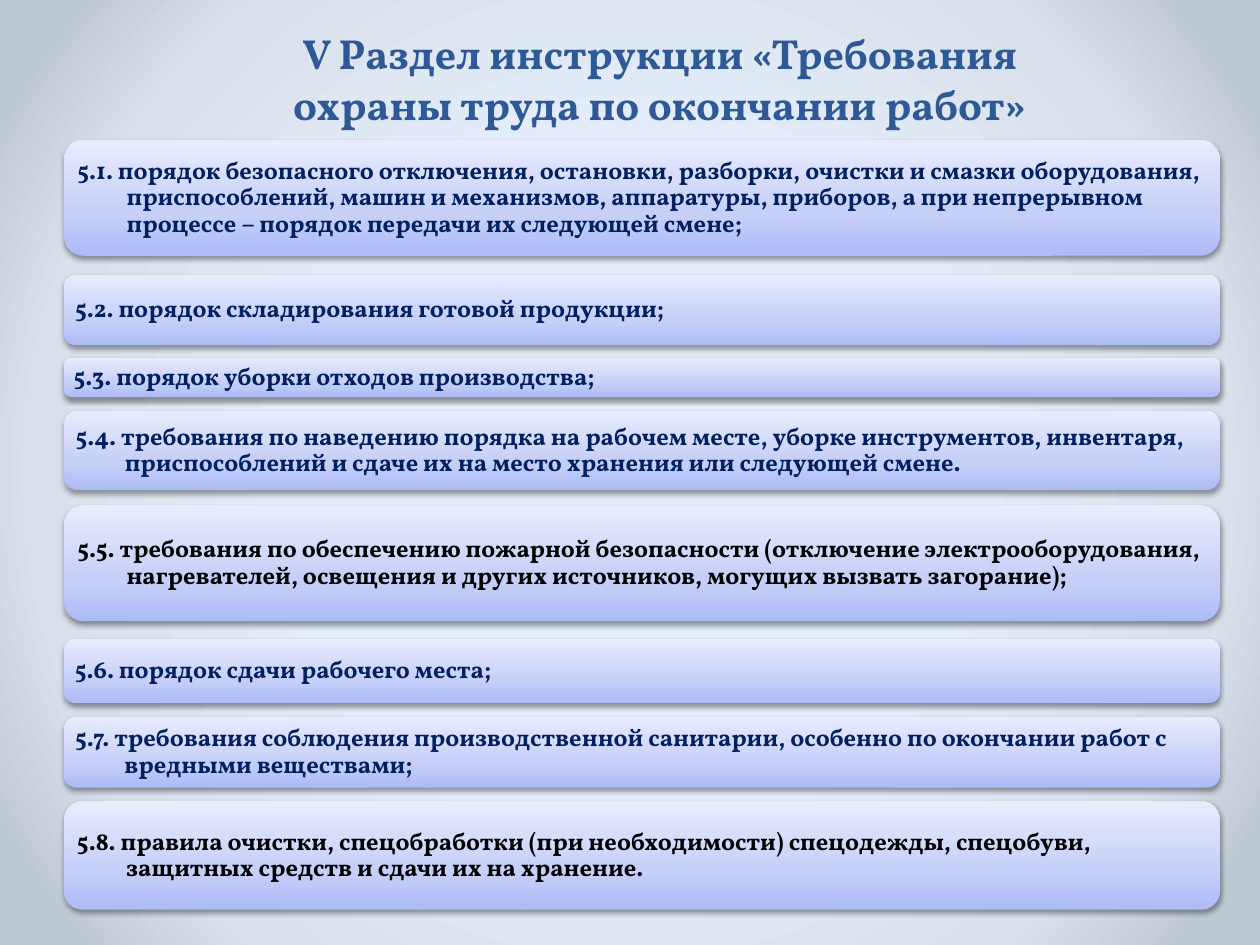
from dataclasses import dataclass

import lxml.etree
import pptx
import pptx.dml.color
import pptx.enum.shapes
import pptx.enum.text
import pptx.oxml
import pptx.oxml.ns
import pptx.util


@dataclass(frozen=True)
class Theme:
    font: str = "Vollkorn"
    title_size: int = 24
    item_size: int = 14
    title_color: str = "2F5897"
    item_color: str = "002060"
    accent_color: str = "000000"
    shadow_color: str = "000000"
    backdrop: tuple = ((43, "E3EDF9"), (76, "D8E0EB"), (92, "BFC9D4"))
    card: tuple = ((0, "ADBBF6"), (35, "C5CFF8"), (100, "E8ECFD"))


THEME = Theme()
WIDTH, HEIGHT = pptx.util.Inches(10), pptx.util.Inches(7.5)
RADIAL = ('<a:path {ns} path="circle"><a:fillToRect l="50000" t="50000" '
          'r="50000" b="50000"/></a:path>')
UPWARD = '<a:lin {ns} ang="16200000" scaled="0"/>'

TITLE = "V Раздел инструкции «Требования охраны труда по окончании работ»"
TITLE_BOX = (16.5, 2.27, 71.7, 12.13)
CARD_LEFT, CARD_WIDTH = 5.1, 91.7

# Top and height in percent of the slide height, colour, text
CARDS = [
    (14.8, 12.27, THEME.item_color,
     "5.1. порядок безопасного отключения, остановки, разборки, очистки и смазки "
     "оборудования, приспособлений, машин и механизмов, аппаратуры, приборов, а при "
     "непрерывном процессе – порядок передачи их следующей смене;"),
    (29.07, 7.47, THEME.item_color, "5.2. порядок складирования готовой продукции;"),
    (37.87, 4.13, THEME.item_color, "5.3. порядок уборки отходов производства;"),
    (43.47, 8.4, THEME.item_color,
     "5.4. требования по наведению порядка на рабочем месте, уборке инструментов, "
     "инвентаря, приспособлений и сдаче их на место хранения или следующей смене."),
    (53.47, 12.27, THEME.accent_color,
     "5.5. требования по обеспечению пожарной безопасности (отключение "
     "электрооборудования, нагревателей, освещения и других источников, могущих "
     "вызвать загорание);"),
    (67.6, 6.8, THEME.item_color, "5.6. порядок сдачи рабочего места;"),
    (75.87, 7.47, THEME.item_color,
     "5.7. требования соблюдения производственной санитарии, особенно по окончании "
     "работ с вредными веществами;"),
    (84.8, 11.47, THEME.accent_color,
     "5.8. правила очистки, спецобработки (при необходимости) спецодежды, спецобуви, "
     "защитных средств и сдачи их на хранение."),
]


def to_emu(box):
    """Turn percentages of the slide into left, top, width, height."""
    return [round(share * side / 100)
            for share, side in zip(box, (WIDTH, HEIGHT, WIDTH, HEIGHT))]


def set_gradient(fill, owner, stops, direction):
    """Give a fill any number of stops and a linear or radial direction."""
    fill.gradient()
    grad = owner.find(".//" + pptx.oxml.ns.qn("a:gradFill"))
    for child in list(grad):
        grad.remove(child)
    stop_list = lxml.etree.SubElement(grad, pptx.oxml.ns.qn("a:gsLst"))
    for position, color in stops:
        stop = lxml.etree.SubElement(stop_list, pptx.oxml.ns.qn("a:gs"),
                                     pos=str(position * 1000))
        lxml.etree.SubElement(stop, pptx.oxml.ns.qn("a:srgbClr"), val=color)
    grad.append(pptx.oxml.parse_xml(
        direction.format(ns=pptx.oxml.ns.nsdecls("a"))))


def add_shadow(shape):
    shape.shadow.inherit = False
    effects = shape._element.spPr.find(pptx.oxml.ns.qn("a:effectLst"))
    shadow = lxml.etree.SubElement(
        effects, pptx.oxml.ns.qn("a:outerShdw"), dir="5400000", rotWithShape="0",
        blurRad=str(pptx.util.Pt(3.1)), dist=str(pptx.util.Pt(1.6)))
    color = lxml.etree.SubElement(shadow, pptx.oxml.ns.qn("a:srgbClr"),
                                  val=THEME.shadow_color)
    lxml.etree.SubElement(color, pptx.oxml.ns.qn("a:alpha"), val="38000")


def add_run(p, text, size, color):
    r = p.add_run()
    r.text = text
    r.font.name = THEME.font
    r.font.size = pptx.util.Pt(size)
    r.font.bold = True
    r.font.color.rgb = pptx.dml.color.RGBColor.from_string(color)


def fill_title(s, box, text):
    title = s.shapes.title
    title.left, title.top, title.width, title.height = to_emu(box)
    tf = title.text_frame
    tf.word_wrap = True
    tf.auto_size = pptx.enum.text.MSO_AUTO_SIZE.NONE
    tf.vertical_anchor = pptx.enum.text.MSO_ANCHOR.TOP
    tf.margin_left = tf.margin_right = pptx.util.Inches(0.3)
    p = tf.paragraphs[0]
    p.alignment = pptx.enum.text.PP_ALIGN.CENTER
    add_run(p, text, THEME.title_size, THEME.title_color)


def add_card(s, box, color, text):
    """Add a rounded card whose text hangs behind its number."""
    sp = s.shapes.add_shape(pptx.enum.shapes.MSO_SHAPE.ROUNDED_RECTANGLE,
                            *to_emu(box))
    set_gradient(sp.fill, sp._element, THEME.card, UPWARD)
    sp.line.fill.background()
    add_shadow(sp)
    tf = sp.text_frame
    tf.word_wrap = True
    tf.vertical_anchor = pptx.enum.text.MSO_ANCHOR.MIDDLE
    tf.margin_left = tf.margin_right = pptx.util.Inches(0.06)
    tf.margin_top = tf.margin_bottom = pptx.util.Inches(0.06)
    p = tf.paragraphs[0]
    p.alignment = pptx.enum.text.PP_ALIGN.LEFT
    p.line_spacing = 0.9
    indent = pptx.util.Inches(0.39)
    p_pr = p._p.get_or_add_pPr()
    p_pr.set("marL", str(indent))
    p_pr.set("indent", str(-indent))
    add_run(p, text, THEME.item_size, color)


def build_requirements_slide(prs):
    s = prs.slides.add_slide(prs.slide_layouts.get_by_name("Title Only"))
    set_gradient(s.background.fill, s._element, THEME.backdrop, RADIAL)
    fill_title(s, TITLE_BOX, TITLE)
    for top, height, color, text in CARDS:
        add_card(s, (CARD_LEFT, top, CARD_WIDTH, height), color, text)


def main():
    prs = pptx.Presentation()
    prs.slide_width, prs.slide_height = WIDTH, HEIGHT
    build_requirements_slide(prs)
    prs.save("out.pptx")


if __name__ == "__main__":
    main()
